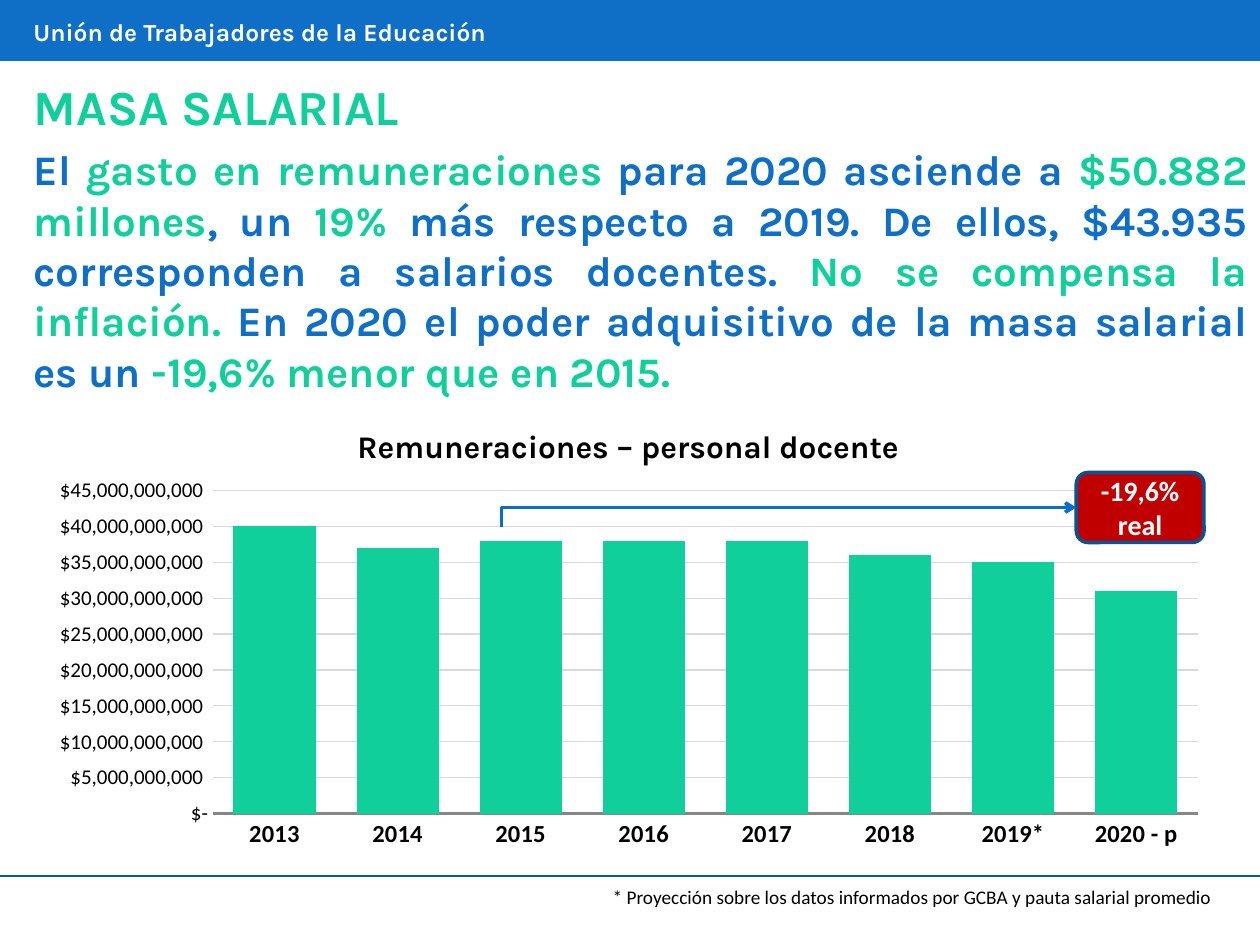
from lxml import etree
from pptx import Presentation
from pptx import util as u
from pptx.chart.data import CategoryChartData
from pptx.dml.color import RGBColor
from pptx.enum import chart as charts, shapes, text
from pptx.oxml import parse_xml
from pptx.oxml.ns import nsdecls, qn

Pt = u.Pt
BLUE = RGBColor(0x0F, 0x6F, 0xC6)
GREEN = RGBColor(0x10, 0xCF, 0x9B)
RED = RGBColor(0xC0, 0x00, 0x00)
NAVY = RGBColor(0x0B, 0x52, 0x92)
ARROW_BLUE = RGBColor(0x0A, 0x6D, 0xC6)
TEAL = RGBColor(0x04, 0x61, 0x7B)
GRID = RGBColor(0xD9, 0xD9, 0xD9)
AXIS = RGBColor(0x86, 0x86, 0x86)
WHITE = RGBColor(0xFF, 0xFF, 0xFF)
BLACK = RGBColor(0x00, 0x00, 0x00)

YEARS = ["2013", "2014", "2015", "2016", "2017", "2018", "2019*", "2020 - p"]
BILLIONS = [40, 37, 38, 38, 38, 36, 35, 31]
MONEY = '_-"$"* #,##0_-;\\-"$"* #,##0_-;_-"$"* "-"'
MESSAGE = [
    ("El ", BLUE),
    ("gasto en remuneraciones ", GREEN),
    ("para 2020 asciende a ", BLUE),
    ("$50.882 millones", GREEN),
    (", un ", BLUE),
    ("19%", GREEN),
    (" más respecto a 2019. De ellos, $43.935 corresponden a salarios docentes. ", BLUE),
    ("No se compensa la inflación. ", GREEN),
    ("En 2020 el poder adquisitivo de la masa salarial es un ", BLUE),
    ("-19,6% menor que en 2015.", GREEN),
]


def set_font(font, color, **values):
    for name, value in values.items():
        setattr(font, name, value)
    font.color.rgb = color


def write(frame, spans, align=text.PP_ALIGN.LEFT, wrap=True, **font):
    frame.word_wrap = wrap
    para = frame.paragraphs[0]
    para.alignment = align
    for words, color in spans:
        span = para.add_run()
        span.text = words
        set_font(span.font, color, **font)
    return para


def place(shape, box):
    for name, value in zip(("left", "top", "width", "height"), box):
        setattr(shape, name, Pt(value))


def add_box(page, kind, box, fill, line):
    shape = page.shapes.add_shape(kind, *map(Pt, box))
    shape.shadow.inherit = False
    shape.fill.solid()
    shape.fill.fore_color.rgb = fill
    shape.line.color.rgb = line
    shape.line.width = Pt(2)
    return shape


def add_line(page, start, end, color, width):
    line = page.shapes.add_connector(
        shapes.MSO_CONNECTOR.STRAIGHT, *map(Pt, start + end))
    line.line.color.rgb = color
    line.line.width = Pt(width)
    etree.SubElement(line._element.spPr, qn("a:effectLst"))
    return line


def header(page, box):
    left, top, width, height = box
    add_box(page, shapes.MSO_SHAPE.RECTANGLE, box, BLUE, BLUE)
    label = page.shapes.add_textbox(
        *map(Pt, (left + 12, top + 6, width - 60, height - 10)))
    write(label.text_frame, [("Unión de Trabajadores de la Educación", WHITE)],
          name="Karla", size=Pt(14), bold=True)


def message(page, box):
    left, top, width, height = box
    title, body = page.placeholders
    place(title, (left, top, width - 22, 41))
    place(body, (left, top + 38.5, width, height - 38.5))
    for holder in (title, body):
        holder.text_frame.auto_size = text.MSO_AUTO_SIZE.NONE
        holder.text_frame.vertical_anchor = text.MSO_ANCHOR.TOP

    write(title.text_frame, [("MASA SALARIAL", GREEN)],
          name="Karla", size=Pt(28), bold=True)

    para = write(body.text_frame, MESSAGE, text.PP_ALIGN.JUSTIFY,
                 name="Karla", size=Pt(24), bold=True)
    para.space_before = Pt(0)
    props = para._p.get_or_add_pPr()
    props.set("marL", "0")
    props.set("indent", "0")
    etree.SubElement(props, qn("a:buNone"))


def salary_chart(page, box):
    data = CategoryChartData()
    data.categories = YEARS
    data.add_series("Series 1", [value * 10**9 for value in BILLIONS])
    chart = page.shapes.add_chart(
        charts.XL_CHART_TYPE.COLUMN_CLUSTERED, *map(Pt, box), data).chart
    chart.has_legend = False
    set_font(chart.font, BLACK, name="Calibri", size=Pt(10))
    chart.has_title = True
    write(chart.chart_title.text_frame,
          [("Remuneraciones – personal docente", BLACK)],
          text.PP_ALIGN.CENTER, name="Karla", size=Pt(18), bold=True)

    # Columns
    plot = chart.plots[0]
    plot.gap_width = 50
    plot.vary_by_categories = False
    fill = plot.series[0].format.fill
    fill.solid()
    fill.fore_color.rgb = GREEN

    # Axes
    years, money = chart.category_axis, chart.value_axis
    for axis, size, bold in ((years, 14, True), (money, 12, False)):
        axis.major_tick_mark = charts.XL_TICK_MARK.NONE
        set_font(axis.tick_labels.font, BLACK, name="Calibri",
                 size=Pt(size), bold=bold)
    years.format.line.color.rgb = AXIS
    years.format.line.width = Pt(1.5)
    money.format.line.fill.background()
    money.minimum_scale, money.maximum_scale = 0, 45 * 10**9
    money.major_unit = 5 * 10**9
    money.tick_labels.number_format = MONEY
    money.tick_labels.number_format_is_linked = False
    grid = money.major_gridlines.format.line
    grid.color.rgb = GRID
    grid.width = Pt(0.75)

    # Plot area, as shares of the chart
    area = plot._element.getparent()
    for old in area.findall(qn("c:layout")):
        area.remove(old)
    settings = {"layoutTarget": "inner", "xMode": "edge", "yMode": "edge",
                "x": 0.15, "y": 0.19, "w": 0.83, "h": 0.71}
    parts = "".join(f'<c:{key} val="{value}"/>' for key, value in settings.items())
    area.insert(0, parse_xml(
        f'<c:layout {nsdecls("c")}><c:manualLayout>{parts}</c:manualLayout></c:layout>'))


def drop_callout(page, box):
    left, top, width, height = box
    tag_width, tag_height = 73, 40
    tag = add_box(page, shapes.MSO_SHAPE.ROUNDED_RECTANGLE,
                  (left + width - tag_width, top, tag_width, tag_height), RED, NAVY)
    tag.text_frame.vertical_anchor = text.MSO_ANCHOR.MIDDLE
    write(tag.text_frame, [("-19,6% real", WHITE)], text.PP_ALIGN.CENTER,
          name="Calibri", size=Pt(16), bold=True)

    # Bracket from 2015 to the tag
    corner = (left, top + tag_height / 2)
    add_line(page, (left, corner[1] + 11), corner, ARROW_BLUE, 1.75)
    arrow = add_line(page, corner, (left + width - tag_width, corner[1]), ARROW_BLUE, 2)
    arrow.end_connect(tag, 1)
    etree.SubElement(arrow.line._get_or_add_ln(), qn("a:tailEnd"), type="arrow")


def footer(page, box):
    left, top, width, height = box
    add_line(page, (left, top), (left + width, top), TEAL, 1.5)
    note = page.shapes.add_textbox(
        *map(Pt, (left + 343, top + 2, 359, height)))
    write(note.text_frame,
          [("* Proyección sobre los datos informados por GCBA y pauta salarial promedio", BLACK)],
          wrap=False, name="Calibri", size=Pt(11))


def main():
    deck = Presentation()
    deck.slide_width, deck.slide_height = Pt(720), Pt(540)
    page = deck.slides.add_slide(deck.slide_layouts[1])
    header(page, (0, 0, 720, 34))
    message(page, (12, 40, 708, 191))
    salary_chart(page, (20, 231, 678, 260))
    drop_callout(page, (286.5, 270, 401.5, 40))
    footer(page, (0, 500.5, 720, 21))
    deck.save("out.pptx")


if __name__ == "__main__":
    main()
